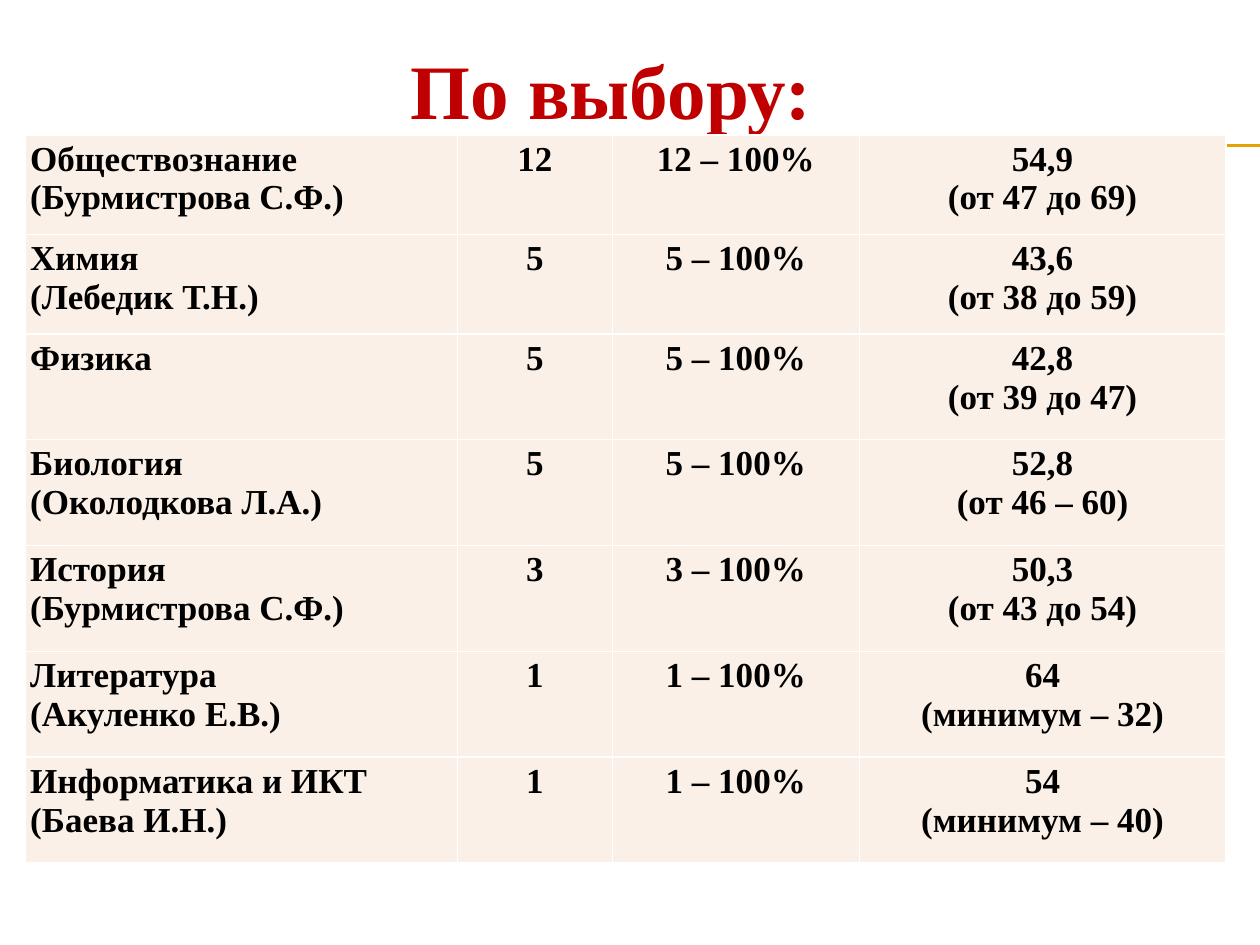
from lxml import etree
from pptx import Presentation
from pptx.dml.color import RGBColor
from pptx.enum.shapes import MSO_CONNECTOR
from pptx.enum.text import PP_ALIGN
from pptx.oxml.ns import qn
from pptx.util import Inches, Pt

STRAIGHT = MSO_CONNECTOR.STRAIGHT
LEFT, CENTER = PP_ALIGN.LEFT, PP_ALIGN.CENTER

RED = RGBColor(0xC0, 0x00, 0x00)
BLACK = RGBColor(0x00, 0x00, 0x00)
WHITE = RGBColor(0xFF, 0xFF, 0xFF)
CREAM = RGBColor(0xFA, 0xF0, 0xE7)
GOLD = RGBColor(0xE2, 0xA2, 0x00)

# Subject and teacher, number of pupils, passed, average score and range
RESULTS = [
    ("Обществознание\n(Бурмистрова С.Ф.)", "12", "12 – 100%", "54,9\n(от 47 до 69)"),
    ("Химия\n(Лебедик Т.Н.)", "5", "5 – 100%", "43,6\n(от 38 до 59)"),
    ("Физика", "5", "5 – 100%", "42,8\n(от 39 до 47)"),
    ("Биология\n(Околодкова Л.А.)", "5", "5 – 100%", "52,8\n(от 46 – 60)"),
    ("История\n(Бурмистрова С.Ф.)", "3", "3 – 100%", "50,3\n(от 43 до 54)"),
    ("Литература\n(Акуленко Е.В.)", "1", "1 – 100%", "64\n(минимум – 32)"),
    ("Информатика и ИКТ\n(Баева И.Н.)", "1", "1 – 100%", "54\n(минимум – 40)"),
]
COL_WIDTHS = [3.43, 1.23, 1.96, 2.91]
ROW_HEIGHTS = [0.79] * 2 + [0.84] * 5


class SlideBuilder:
    font = "Times New Roman"
    cell_margin = Inches(0.04)

    def __init__(self, prs):
        self.s = prs.slides.add_slide(prs.slide_layouts[1])
        title = self.s.shapes.title
        title.element.getparent().remove(title.element)

    def format_text(self, tf, size, color, align):
        for p in tf.paragraphs:
            p.alignment = align
            for r in p.runs:
                r.font.name = self.font
                r.font.size = Pt(size)
                r.font.bold = True
                r.font.color.rgb = color

    def rule(self, x1, x2, y):
        line = self.s.shapes.add_connector(
            STRAIGHT, Inches(x1), Inches(y), Inches(x2), Inches(y))
        line.line.color.rgb = GOLD
        line.line.width = Pt(0.75)
        etree.SubElement(line.element.spPr, qn("a:effectLst"))

    def heading(self, text, x, y, w, h):
        sp = self.s.placeholders[1]
        sp.left, sp.top, sp.width, sp.height = map(Inches, (x, y, w, h))
        tf = sp.text_frame
        tf.text = text
        self.format_text(tf, 44, RED, CENTER)
        # No bullet or hanging indent
        pPr = tf.paragraphs[0]._p.get_or_add_pPr()
        pPr.set("marL", "0")
        pPr.set("indent", "0")
        etree.SubElement(pPr, qn("a:buNone"))

    def borders(self, cell):
        tcPr = cell._tc.get_or_add_tcPr()
        for i, side in enumerate(("lnL", "lnR", "lnT", "lnB")):
            ln = etree.Element(qn(f"a:{side}"), w=str(Pt(1)))
            fill = etree.SubElement(ln, qn("a:solidFill"))
            etree.SubElement(fill, qn("a:srgbClr"), val=str(WHITE))
            tcPr.insert(i, ln)

    def cell(self, cell, text, align):
        cell.margin_left = cell.margin_right = self.cell_margin
        cell.margin_top = cell.margin_bottom = self.cell_margin
        cell.fill.solid()
        cell.fill.fore_color.rgb = CREAM
        cell.text_frame.text = text
        self.format_text(cell.text_frame, 20, BLACK, align)
        self.borders(cell)

    def table(self, rows, x, y, widths, heights):
        table = self.s.shapes.add_table(
            len(rows), len(widths), Inches(x), Inches(y),
            Inches(sum(widths)), Inches(sum(heights))).table
        table.first_row = table.horz_banding = False
        for col, width in zip(table.columns, widths):
            col.width = Inches(width)
        for row, height, values in zip(table.rows, heights, rows):
            row.height = Inches(height)
            for i, value in enumerate(values):
                self.cell(row.cells[i], value, CENTER if i else LEFT)


def main():
    prs = Presentation()
    prs.slide_width, prs.slide_height = Inches(10), Inches(7.5)
    slide = SlideBuilder(prs)

    # Double rule beside the heading
    for y in (1.15, 1.16):
        slide.rule(0.56, 10, y)

    # Heading and results
    slide.heading("По выбору:", 0.35, 0.29, 9, 6.85)
    slide.table(RESULTS, 0.2, 1.07, COL_WIDTHS, ROW_HEIGHTS)

    prs.save("out.pptx")


if __name__ == "__main__":
    main()
